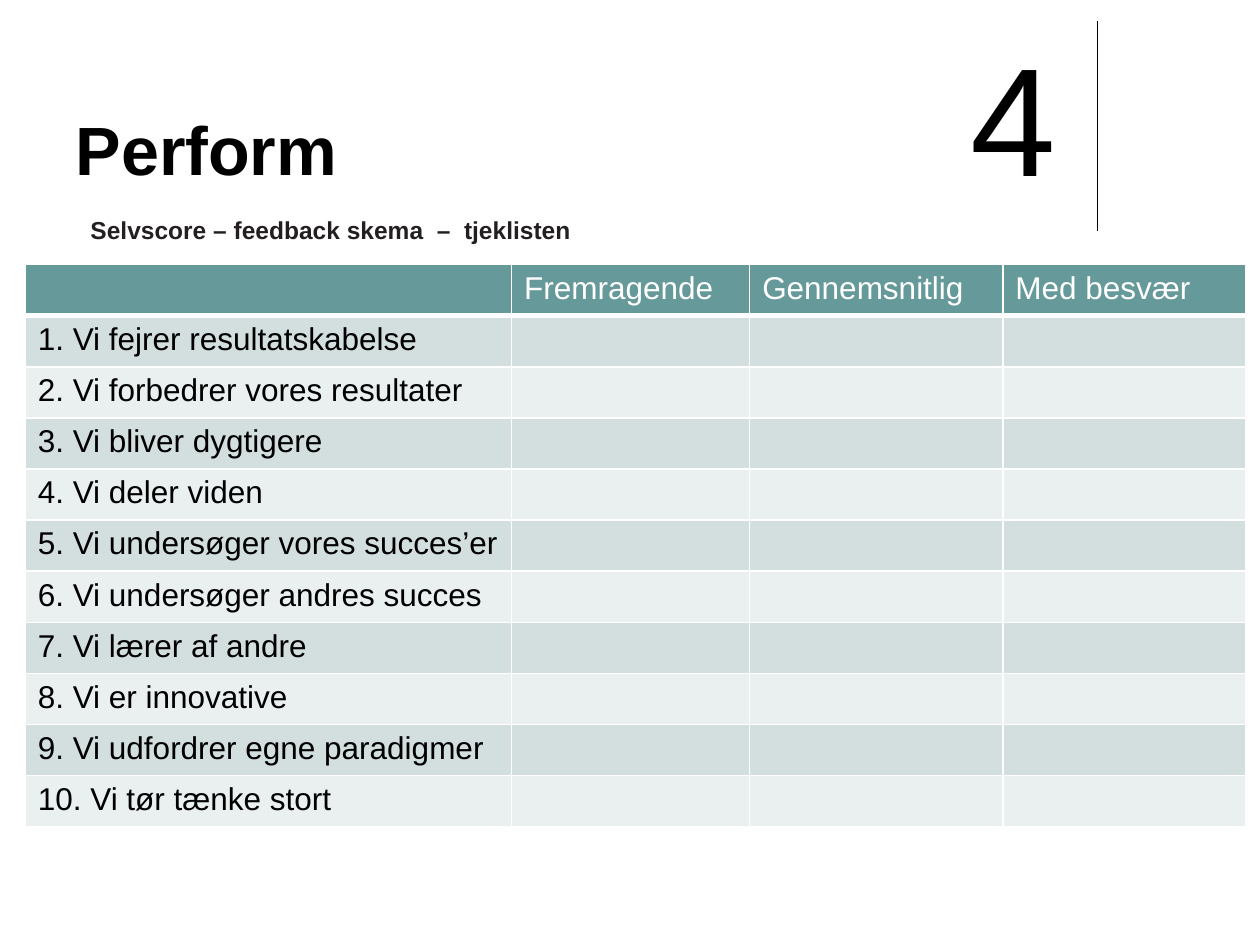
from dataclasses import dataclass

from lxml.etree import SubElement
from pptx import Presentation
from pptx.dml.color import RGBColor
from pptx.enum.shapes import MSO_CONNECTOR
from pptx.enum.text import MSO_ANCHOR
from pptx.oxml.ns import qn
from pptx.util import Inches, Pt


@dataclass(frozen=True)
class Theme:
    """Colours, type sizes and line widths of the deck."""
    font: str = "Arial"
    ink: str = "000000"
    soft_ink: str = "231F20"
    paper: str = "FFFFFF"
    header: str = "669999"
    bands: tuple = ("D3DEDE", "EAEFEF")
    title_size: float = 39
    subtitle_size: float = 14
    table_size: float = 18
    number_size: float = 88
    rule: float = 0.75
    border: float = 1
    header_border: float = 3


RATINGS = ["Fremragende", "Gennemsnitlig", "Med besvær"]
STATEMENTS = [
    "Vi fejrer resultatskabelse",
    "Vi forbedrer vores resultater",
    "Vi bliver dygtigere",
    "Vi deler viden",
    "Vi undersøger vores succes’er",
    "Vi undersøger andres succes",
    "Vi lærer af andre",
    "Vi er innovative",
    "Vi udfordrer egne paradigmer",
    "Vi tør tænke stort",
]


def write(frame, text, *, font, size, color, bold=False, anchor=None):
    """Put formatted text in a text frame."""
    if anchor is not None:
        frame.vertical_anchor = anchor
    span = frame.paragraphs[0].add_run()
    span.text = text
    span.font.name = font
    span.font.size = Pt(size)
    span.font.bold = bold
    span.font.color.rgb = RGBColor.from_string(color)


class Page:
    """One slide with its theme; lengths are in inches."""

    def __init__(self, deck, theme):
        """Add a title-only slide to the deck."""
        self.theme = theme
        self.slide = deck.slides.add_slide(deck.slide_layouts[5])

    def title(self, text, left, top, width, height):
        """Place and format the title placeholder."""
        box = self.slide.shapes.title
        box.left, box.top = Inches(left), Inches(top)
        box.width, box.height = Inches(width), Inches(height)
        write(box.text_frame, text, font=self.theme.font, size=self.theme.title_size,
              color=self.theme.ink, bold=True, anchor=MSO_ANCHOR.BOTTOM)
        box.text_frame.paragraphs[0].alignment = 1

    def label(self, text, left, top, width, height, **style):
        """Add a text box that stays on one line."""
        area = map(Inches, (left, top, width, height))
        frame = self.slide.shapes.add_textbox(*area).text_frame
        frame.word_wrap = False
        write(frame, text, font=self.theme.font, **style)

    def vertical_rule(self, left, top, bottom):
        """Draw a thin vertical line."""
        ends = map(Inches, (left, top, left, bottom))
        line = self.slide.shapes.add_connector(MSO_CONNECTOR.STRAIGHT, *ends)
        line.line.color.rgb = RGBColor.from_string(self.theme.ink)
        line.line.width = Pt(self.theme.rule)
        SubElement(line._element.spPr, qn("a:effectLst"))

    def cell(self, cell, text, fill, color, bottom):
        """Fill, border and write one table cell."""
        properties = cell._tc.get_or_add_tcPr()
        widths = dict.fromkeys(("a:lnL", "a:lnR", "a:lnT"), self.theme.border)
        for side, width in (widths | {"a:lnB": bottom}).items():
            edge = SubElement(properties, qn(side), w=str(Pt(width)))
            paint = SubElement(edge, qn("a:solidFill"))
            SubElement(paint, qn("a:srgbClr"), val=self.theme.paper)
        cell.fill.solid()
        cell.fill.fore_color.rgb = RGBColor.from_string(fill)
        if text:
            write(cell.text_frame, text, font=self.theme.font,
                  size=self.theme.table_size, color=color)

    def table(self, rows, left, top, widths, height):
        """Add a table with a header row and alternating bands."""
        theme = self.theme
        area = map(Inches, (left, top, sum(widths), height))
        table = self.slide.shapes.add_table(len(rows), len(widths), *area).table
        table.horz_banding = False
        for column, width in zip(table.columns, widths):
            column.width = Inches(width)
        for number, row in enumerate(rows):
            if number == 0:
                look = theme.header, theme.paper, theme.header_border
            else:
                look = theme.bands[(number - 1) % 2], theme.ink, theme.border
            for position, text in enumerate(row):
                self.cell(table.cell(number, position), text, *look)


def main():
    """Build and save the checklist slide."""
    deck = Presentation()
    deck.slide_width, deck.slide_height = Inches(10), Inches(7.5)
    theme = Theme()
    page = Page(deck, theme)
    page.vertical_rule(8.71, 0.17, 1.83)
    page.title("Perform", 0.5, 0.13, 8.25, 1.42)
    rows = [["", *RATINGS]]
    for number, statement in enumerate(STATEMENTS, 1):
        rows.append([f"{number}. {statement}"] + [""] * len(RATINGS))
    page.table(rows, 0.2, 2.1, [3.86, 1.89, 2.01, 1.93], 4.42)
    page.label("Selvscore – feedback skema  –  tjeklisten", 0.62, 1.64, 4.03, 0.37,
               size=theme.subtitle_size, color=theme.soft_ink, bold=True,
               anchor=MSO_ANCHOR.MIDDLE)
    page.label("4", 7.6, 0.13, 0.89, 1.58, size=theme.number_size, color=theme.ink)
    deck.save("out.pptx")


if __name__ == "__main__":
    main()
